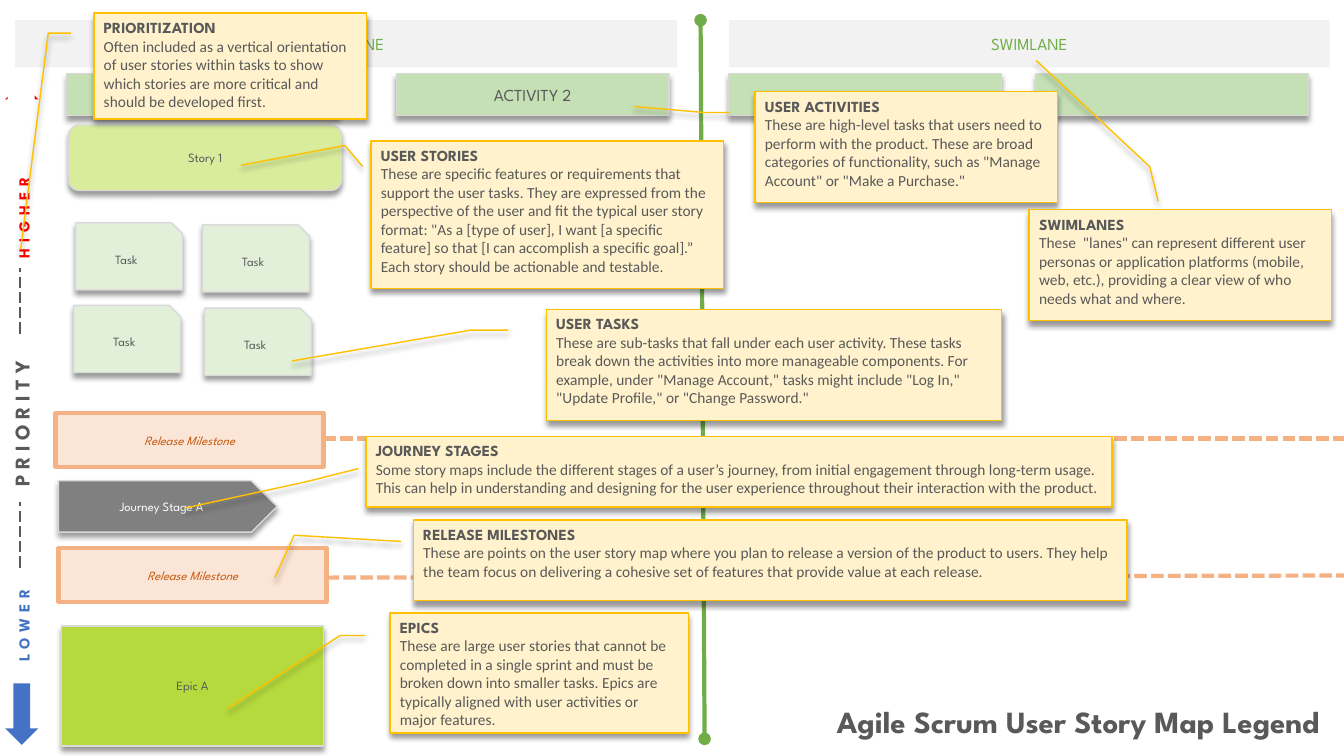
from collections import namedtuple

from lxml import etree
from pptx import Presentation
from pptx.dml import color
from pptx.enum import dml, shapes, text
from pptx.oxml import ns
from pptx.util import Pt

COLOURS = {
    "white": "FFFFFF", "ink": "595959", "edge": "D9D9D9", "lane": "F2F2F2",
    "green": "70AD47", "activity": "C5E0B4", "task": "E2F0D9", "story": "D9EC9C",
    "epic": "B5DA3E", "stage": "808080", "milestone": "FBE5D6", "orange": "F4B183",
    "rust": "C55A11", "lower": "4472C4", "higher": "FF0000",
    "note": "FFF2CC", "gold": "FFC000", "shadow": "000000",
}
HEADING_FONT = "League Spartan"
BODY_FONT = "Calibri"
KIND = shapes.MSO_SHAPE
Box = namedtuple("Box", "left top width height")

ELBOW = (0.188, -0.083, 0.188, -0.167)
CALLOUTS = [
    (Box(67, 9.4, 195, 75.6), ELBOW + (2.23, -0.268), "PRIORITIZATION",
     "Often included as a vertical orientation of user stories within tasks to show "
     "which stories are more critical and should be developed first."),
    (Box(539.3, 65.5, 216, 79.2), ELBOW + (0.134, -0.401), "USER ACTIVITIES",
     "These are high-level tasks that users need to perform with the product. These are "
     'broad categories of functionality, such as "Manage Account" or "Make a Purchase."'),
    (Box(735.1, 149.8, 216, 79.2), (-0.077, 0.427, -0.388, 0.399, -1.347, 0.023), "SWIMLANES",
     'These  "lanes" can represent different user personas or application platforms '
     "(mobile, web, etc.), providing a clear view of who needs what and where."),
    (Box(390.2, 221, 325.4, 79.2), ELBOW + (0.465, -0.558), "USER TASKS",
     "These are sub-tasks that fall under each user activity. These tasks break down the "
     'activities into more manageable components. For example, under "Manage Account," '
     'tasks might include "Log In," "Update Profile," or "Change Password."'),
    (Box(265, 100.8, 252, 105.1), (0.173, -0.024, 0.03, -0.074, 0.164, -0.368), "USER STORIES",
     "These are specific features or requirements that support the user tasks. They are "
     "expressed from the perspective of the user and fit the typical user story format: "
     '"As a [type of user], I want [a specific feature] so that [I can accomplish a '
     "specific goal].” Each story should be actionable and testable."),
    (Box(295.2, 371.5, 509.8, 57.6), (0.265, -0.017, 0.188, -0.167, 0.715, -0.194),
     "RELEASE MILESTONES",
     "These are points on the user story map where you plan to release a version of the "
     "product to users. They help the team focus on delivering a cohesive set of features "
     "that provide value at each release."),
    (Box(261.4, 311.8, 532.8, 50.4), (0.454, -0.01, 0.646, -0.082, 1.016, -0.243),
     "JOURNEY STAGES",
     "Some story maps include the different stages of a user’s journey, from initial "
     "engagement through long-term usage. This can help in understanding and designing for "
     "the user experience throughout their interaction with the product."),
    (Box(278.6, 437.8, 213.1, 85.7), ELBOW + (0.797, -0.545), "EPICS",
     "These are large user stories that cannot be completed in a single sprint and must be "
     "broken down into smaller tasks. Epics are typically aligned with user activities or "
     "major features."),
]


def rgb(name):
    return color.RGBColor.from_string(COLOURS[name])


def set_font(font, size, colour, name=HEADING_FONT, **style):
    font.size, font.name = Pt(size), name
    font.color.rgb = rgb(colour)
    for key, value in style.items():
        setattr(font, key, value)


def add_shadow(shape):
    effects = shape._element.spPr.find(ns.qn("a:effectLst"))
    shadow = etree.SubElement(effects, ns.qn("a:outerShdw"), blurRad=str(Pt(4)),
                              dist=str(Pt(3)), dir="5400000", algn="t", rotWithShape="0")
    tint = etree.SubElement(shadow, ns.qn("a:srgbClr"), val=COLOURS["shadow"])
    etree.SubElement(tint, ns.qn("a:alpha"), val="40000")


def add_block(slide, kind, box, fill, line=None, weight=1, shadow=False):
    shape = slide.shapes.add_shape(kind, *map(Pt, box))
    shape.shadow.inherit = False
    shape.fill.solid()
    shape.fill.fore_color.rgb = rgb(fill)
    if line:
        shape.line.color.rgb = rgb(line)
        shape.line.width = Pt(weight)
    else:
        shape.line.fill.background()
    if shadow:
        add_shadow(shape)
    return shape


def add_card(slide, kind, box, fill, label, size=9, colour="ink"):
    shape = add_block(slide, kind, box, fill, "edge", shadow=True)
    if label:
        write_label(shape, label, size, colour)


def write_label(shape, label, size, colour, **style):
    paragraph = shape.text_frame.paragraphs[0]
    paragraph.text = label
    paragraph.alignment = text.PP_ALIGN.CENTER
    set_font(paragraph.font, size, colour, **style)


def add_rule(slide, start, end, colour, weight, dash=None):
    points = map(Pt, start + end)
    rule = slide.shapes.add_connector(shapes.MSO_CONNECTOR.STRAIGHT, *points)
    rule.line.color.rgb = rgb(colour)
    rule.line.width = Pt(weight)
    if dash:
        rule.line.dash_style = dash
    etree.SubElement(rule._element.spPr, ns.qn("a:effectLst"))
    return rule


def add_swimlanes(slide, box):
    for offset, width in ((0, 473), (509.8, 429.2)):
        lane = add_block(slide, KIND.RECTANGLE,
                         Box(box.left + offset, box.top, width, box.height), "lane")
        write_label(lane, "SWIMLANE", 12, "green")


def add_activities(slide, box):
    for offset, label in ((0, "ACTIVITY 1"), (235.5, "ACTIVITY 2"), (473, ""), (692, "")):
        add_card(slide, KIND.RECTANGLE, Box(box.left + offset, box.top, 195, box.height),
                 "activity", label, 12)


def add_tasks(slide, box):
    for across, down in ((1.5, 0), (92, 1.5), (0, 59), (93.5, 61)):
        add_card(slide, KIND.SNIP_1_RECTANGLE,
                 Box(box.left + across, box.top + down, 76.3, 48), "task", "Task")


def add_milestone(slide, box, rule_start, rule_end):
    add_rule(slide, (box.left + box.width, box.top + rule_start),
             (960, box.top + rule_end), "orange", 3, dml.MSO_LINE.SQUARE_DOT)
    shape = add_block(slide, KIND.RECTANGLE, box, "milestone", "orange", 3)
    write_label(shape, "Release Milestone", 9, "rust", italic=True)


def add_divider(slide, box):
    rule = add_rule(slide, (box.left, box.top),
                    (box.left + box.width, box.top + box.height), "green", 3)
    outline = rule.line._get_or_add_ln()
    for end in ("a:headEnd", "a:tailEnd"):
        etree.SubElement(outline, ns.qn(end), type="oval")


def add_priority_rail(slide, box):
    arrow_height = 43.9
    for top, colour, turn in ((box.top + box.height - arrow_height, "lower", 180),
                              (box.top, "higher", 0)):
        arrow = add_block(slide, KIND.UP_ARROW,
                          Box(box.left, top, box.width, arrow_height), colour)
        arrow.rotation = turn

    length, depth = 423.4, 19.4
    label = add_block(slide, KIND.RECTANGLE,
                      Box(box.left + 11.5 - length / 2, box.top + 199.5, length, depth), "white")
    label.rotation = 270
    paragraph = label.text_frame.paragraphs[0]
    paragraph.alignment = text.PP_ALIGN.LEFT
    tabs = etree.SubElement(paragraph._p.get_or_add_pPr(), ns.qn("a:tabLst"))
    for stop in (125, 288.5):
        etree.SubElement(tabs, ns.qn("a:tab"), pos=str(Pt(stop)), algn="l")
    paragraph.font.name, paragraph.font.bold = HEADING_FONT, True
    for words, size, colour in (("LOWER", 11, "lower"), ("\tPRIORITY", 15, "ink"),
                                ("\tHIGHER", 11, "higher")):
        run = paragraph.add_run()
        run.text = words
        run.font.size, run.font.color.rgb = Pt(size), rgb(colour)
        run._r.get_or_add_rPr().set("spc", "400")

    for top in (132.5, 299.6):
        x, y = box.left + 10.8, box.top + top
        add_rule(slide, (x, y + 46.8), (x, y), "ink", 1, dml.MSO_LINE.LONG_DASH)


def add_title(slide, box):
    title = slide.shapes.title
    title.left, title.top, title.width, title.height = map(Pt, box)
    frame = title.text_frame
    frame.text = "Agile Scrum User Story Map Legend"
    frame.word_wrap = True
    frame.auto_size = text.MSO_AUTO_SIZE.NONE
    frame.vertical_anchor = text.MSO_ANCHOR.TOP
    paragraph = frame.paragraphs[0]
    paragraph.alignment = text.PP_ALIGN.RIGHT
    set_font(paragraph.font, 22, "ink", bold=True)


def add_callout(slide, box, leader, heading, body):
    shape = add_block(slide, KIND.LINE_CALLOUT_2, box, "note", "gold", shadow=True)
    for index, value in enumerate(leader):
        shape.adjustments[index] = value
    shape.text_frame.vertical_anchor = text.MSO_ANCHOR.TOP
    paragraph = shape.text_frame.paragraphs[0]
    paragraph.alignment = text.PP_ALIGN.LEFT
    set_font(paragraph.font, 11, "ink", BODY_FONT)
    run = paragraph.add_run()
    run.text, run.font.name, run.font.bold = heading, HEADING_FONT, True
    paragraph.add_line_break()
    paragraph.add_run().text = body


def main():
    presentation = Presentation()
    presentation.slide_width, presentation.slide_height = Pt(960), Pt(540)
    slide = presentation.slides.add_slide(presentation.slide_layouts[5])
    add_title(slide, Box(368, 498.2, 581.8, 33.8))
    add_swimlanes(slide, Box(10.8, 14.4, 939, 33.8))
    add_activities(slide, Box(47.5, 52.5, 887, 30.2))
    add_tasks(slide, Box(52.6, 159.1, 169.8, 109))
    add_card(slide, KIND.ROUNDED_RECTANGLE, Box(49, 89.3, 195, 46.8), "story", "Story 1")
    add_card(slide, KIND.RECTANGLE, Box(43.9, 447.1, 187.2, 85.7), "epic", "Epic A")
    add_milestone(slide, Box(39.6, 295.2, 191.5, 38.2), 18, 18)
    add_milestone(slide, Box(41.8, 391.7, 191.5, 38.2), 20.9, 19.4)
    add_divider(slide, Box(500.4, 14.4, 2.9, 513.4))
    add_card(slide, KIND.PENTAGON, Box(41.8, 343.4, 156.2, 36.7), "stage",
             "Journey Stage A", colour="white")
    add_priority_rail(slide, Box(3.6, 59, 23.8, 473.1))
    for callout in CALLOUTS:
        add_callout(slide, *callout)
    presentation.save("out.pptx")


if __name__ == "__main__":
    main()
